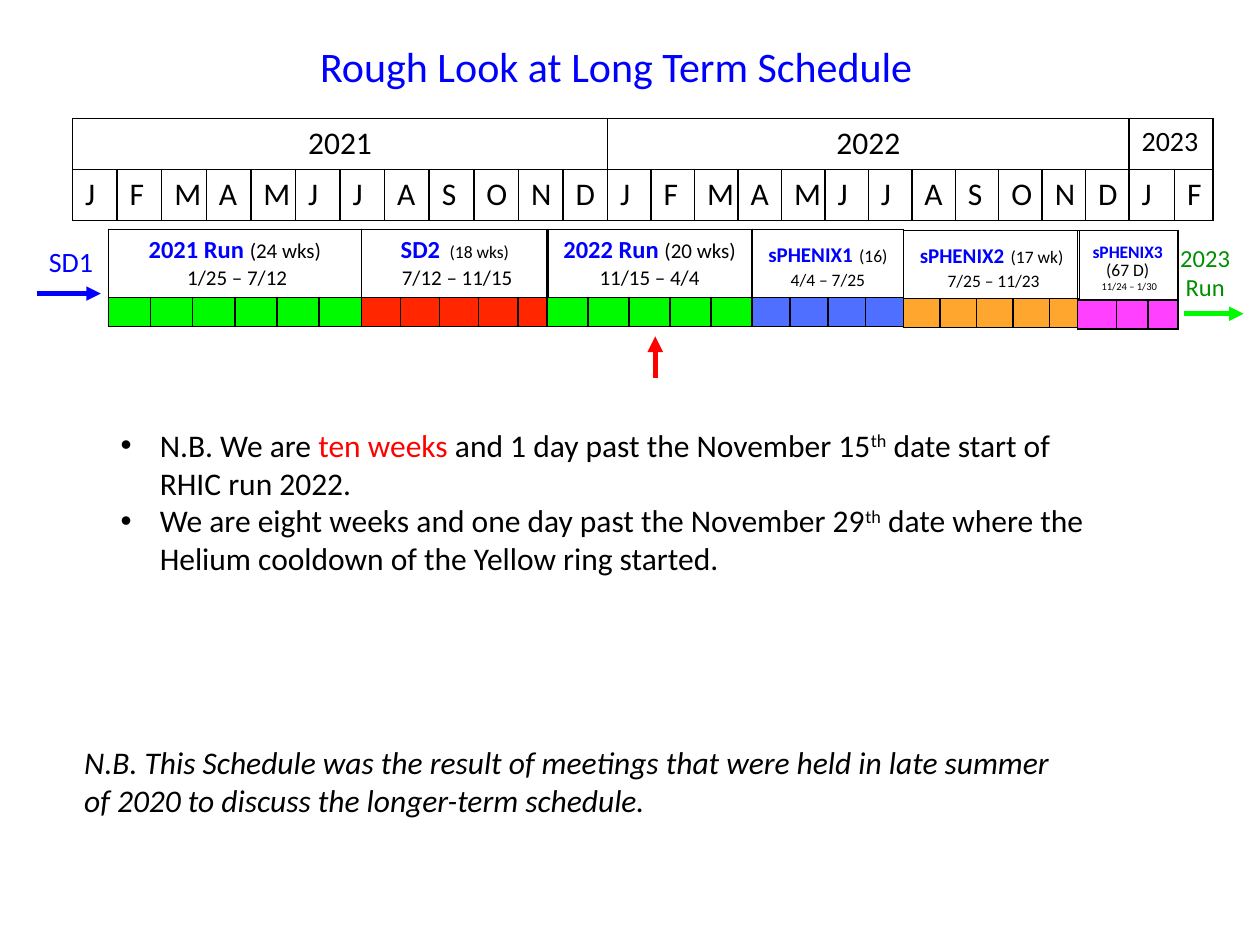
from dataclasses import dataclass
from itertools import accumulate
from typing import Optional, Sequence

from lxml.etree import SubElement
from pptx import Presentation
from pptx.dml.color import RGBColor
from pptx.enum.shapes import MSO_CONNECTOR
from pptx.enum.text import MSO_ANCHOR, MSO_AUTO_SIZE, PP_ALIGN
from pptx.oxml.ns import qn
from pptx.util import Emu, Inches, Pt

GRID_COLUMNS, GRID_ROWS = 100, 75
SLIDE_WIDTH, SLIDE_HEIGHT = Inches(10), Inches(7.5)
FONT = "Calibri"
BLACK, BLUE, RED, GREEN, DARK_GREEN = "000000", "0000FF", "FF0000", "00FA00", "008F00"
MONTHS = "JFMAMJJASOND"


@dataclass(frozen=True)
class Run:
    text: str
    size: float = 18
    color: str = BLACK
    bold: bool = False
    italic: bool = False
    raised: bool = False


@dataclass(frozen=True)
class Phase:
    top: float
    cells: Sequence[float]
    color: str
    heading: Sequence[Sequence[Run]]
    opacity: int = 100
    spacing: Optional[float] = None


@dataclass(frozen=True)
class Year:
    name: str
    months: Sequence[float]
    size: float = 18
    align: PP_ALIGN = PP_ALIGN.CENTER


@dataclass(frozen=True)
class Arrow:
    start: tuple[float, float]
    end: tuple[float, float]
    color: str
    width: float = 2.75


def across(columns: float) -> Emu:
    return Emu(round(SLIDE_WIDTH * columns / GRID_COLUMNS))


def down(rows: float) -> Emu:
    return Emu(round(SLIDE_HEIGHT * rows / GRID_ROWS))


def rgb(color: str) -> RGBColor:
    return RGBColor.from_string(color)


def write(frame, paragraphs: Sequence[Sequence[Run]], align=PP_ALIGN.LEFT,
          spacing: Optional[float] = None, bullet: bool = False) -> None:
    for index, runs in enumerate(paragraphs):
        paragraph = frame.add_paragraph() if index else frame.paragraphs[0]
        paragraph.alignment = align
        if spacing:
            paragraph.line_spacing = spacing
        if bullet:
            properties = paragraph._p.get_or_add_pPr()
            properties.set("marL", str(across(3.1)))
            properties.set("indent", str(-across(3.1)))
            SubElement(properties, qn("a:buFont"), typeface="Arial")
            SubElement(properties, qn("a:buChar"), char="•")
        for item in runs:
            run = paragraph.add_run()
            run.text = item.text
            font = run.font
            font.name, font.size = FONT, Pt(item.size)
            font.bold, font.italic = item.bold, item.italic
            font.color.rgb = rgb(item.color)
            if item.raised:
                run._r.get_or_add_rPr().set("baseline", "30000")


def place(shape, left: float, top: float, width: float, height: float) -> None:
    shape.left, shape.top = across(left), down(top)
    shape.width, shape.height = across(width), down(height)


def add_text(slide, box: Sequence[float], paragraphs, align=PP_ALIGN.LEFT,
             wrap: bool = True, bullet: bool = False) -> None:
    label = slide.shapes.add_textbox(0, 0, 0, 0)
    place(label, *box)
    label.text_frame.word_wrap = wrap
    write(label.text_frame, paragraphs, align, bullet=bullet)


def add_arrow(slide, arrow: Arrow) -> None:
    (x1, y1), (x2, y2) = arrow.start, arrow.end
    connector = slide.shapes.add_connector(
        MSO_CONNECTOR.STRAIGHT, across(x1), down(y1), across(x2), down(y2))
    connector.line.color.rgb = rgb(arrow.color)
    connector.line.width = Pt(arrow.width)
    SubElement(connector.line._get_or_add_ln(), qn("a:tailEnd"), type="triangle")
    SubElement(connector._element.spPr, qn("a:effectLst"))


def add_grid(slide, left: float, top: float, widths: Sequence[float], heights: Sequence[float]):
    table = slide.shapes.add_table(
        len(heights), len(widths), across(left), down(top),
        across(sum(widths)), down(sum(heights))).table
    table.first_row = table.horz_banding = False
    for column, width in zip(table.columns, widths):
        column.width = across(width)
    for row, height in zip(table.rows, heights):
        row.height = down(height)
    for cell in table.iter_cells():
        properties = cell._tc.get_or_add_tcPr()
        for side in ("a:lnL", "a:lnR", "a:lnT", "a:lnB"):
            border = SubElement(properties, qn(side), w=str(Pt(1)))
            SubElement(SubElement(border, qn("a:solidFill")), qn("a:srgbClr"), val=BLACK)
        cell.fill.background()
    return table


def add_calendar(slide, years: Sequence[Year]) -> None:
    widths = [width for year in years for width in year.months]
    table = add_grid(slide, 5.75, 9.4, widths, (4.05, 4.05))
    first = 0
    for year in years:
        count = len(year.months)
        heading = table.cell(0, first)
        heading.merge(table.cell(0, first + count - 1))
        write(heading.text_frame, [[Run(year.name, year.size)]], year.align)
        for offset, month in enumerate(MONTHS[:count]):
            write(table.cell(1, first + offset).text_frame, [[Run(month)]])
        first += count


def add_phase(slide, left: float, phase: Phase) -> None:
    table = add_grid(slide, left, phase.top, phase.cells, (5.4, 2.3))
    heading = table.cell(0, 0)
    heading.merge(table.cell(0, len(phase.cells) - 1))
    write(heading.text_frame, phase.heading, PP_ALIGN.CENTER, phase.spacing)
    for index in range(len(phase.cells)):
        swatch = table.cell(1, index)
        swatch.margin_top = swatch.margin_bottom = 0
        swatch.fill.solid()
        swatch.fill.fore_color.rgb = rgb(phase.color)
        if phase.opacity < 100:
            tint = swatch._tc.tcPr.find(qn("a:solidFill")).find(qn("a:srgbClr"))
            SubElement(tint, qn("a:alpha"), val=str(phase.opacity * 1000))
        SubElement(swatch.text_frame.paragraphs[0]._p, qn("a:endParaRPr"), sz="800")


def name(text: str, size: float) -> Run:
    return Run(text, size, BLUE, bold=True)


YEARS = [
    Year("2021", (4.25 / 12 * 10,) * 12),
    Year("2022", (3.45,) * 12),
    Year("2023", (3.6, 3.05), 16, PP_ALIGN.LEFT),
]
PHASES = [
    Phase(18.2, (3.35,) * 6, GREEN,
          [[name("2021 Run ", 14), Run("(24 wks)", 12)], [Run(" 1/25 – 7/12", 12)]]),
    Phase(18.2, (3.1,) * 4 + (2.3,), "FF2600",
          [[name("SD2 ", 14), Run(" (18 wks)", 10)], [Run(" 7/12 – 11/15", 12)]]),
    Phase(18.2, (3.26,) * 5, GREEN,
          [[name("2022 Run ", 14), Run("(20 wks) 11/15 – 4/4", 12)]]),
    Phase(18.2, (3,) * 4, "0432FF",
          [[name("sPHENIX1", 12), name(" ", 16), Run("(16) 4/4 – 7/25", 10)]], 70),
    Phase(18.3, (2.9,) * 4 + (2.2,), "FF9300",
          [[name("sPHENIX2", 12), name(" ", 16), Run("(17 wk)", 10)],
           [Run(" 7/25 – 11/23", 10)]], 82),
    Phase(18.3, (3.1, 2.5, 2.3), "FF40FF",
          [[name("sPHENIX3", 10), name(" ", 16), Run("(67 D)", 10)],
           [Run(" ", 8), Run("11/24 – 1/30", 6)]], spacing=0.78),
]
ARROWS = [
    Arrow((2.9, 23.3), (8, 23.3), BLUE),
    Arrow((94, 24.9), (98.7, 24.9), GREEN),
    Arrow((52, 30), (52, 26.7), RED, 3),
]
DELAYS = [
    [Run("N.B. We are "), Run("ten weeks ", color=RED),
     Run("and 1 day past the November 15"), Run("th", raised=True),
     Run(" date start of RHIC run 2022.")],
    [Run("We are eight weeks and one day past the November 29"), Run("th", raised=True),
     Run(" date where the Helium cooldown of the Yellow ring started.")],
]
ORIGIN = ("N.B. This Schedule was the result of meetings that were held in late summer "
          "of 2020 to discuss the longer-term schedule.")


def main() -> None:
    deck = Presentation()
    deck.slide_width, deck.slide_height = SLIDE_WIDTH, SLIDE_HEIGHT
    slide = deck.slides.add_slide(deck.slide_layouts[5])

    title = slide.shapes.title
    place(title, 24.4, 2.7, 51.3, 5)
    title.text_frame.auto_size = MSO_AUTO_SIZE.NONE
    title.text_frame.vertical_anchor = MSO_ANCHOR.MIDDLE
    write(title.text_frame, [[Run("Rough Look at Long Term Schedule", 24, BLUE)]])

    add_calendar(slide, YEARS)
    starts = accumulate((sum(phase.cells) for phase in PHASES), initial=8.6)
    for left, phase in zip(starts, PHASES):
        add_phase(slide, left, phase)
    for arrow in ARROWS:
        add_arrow(slide, arrow)

    add_text(slide, (2.9, 18.9, 5.6, 3.7), [[Run("SD1", 16, BLUE)]], wrap=False)
    add_text(slide, (92, 18.8, 7.3, 5.7),
             [[Run(word, 14, DARK_GREEN)] for word in ("2023", "Run")], PP_ALIGN.CENTER)
    add_text(slide, (8.6, 33.3, 80.9, 13.1), DELAYS, bullet=True)
    add_text(slide, (5.7, 58.5, 81.2, 7.1), [[Run(ORIGIN, italic=True)]])
    deck.save("out.pptx")


if __name__ == "__main__":
    main()
